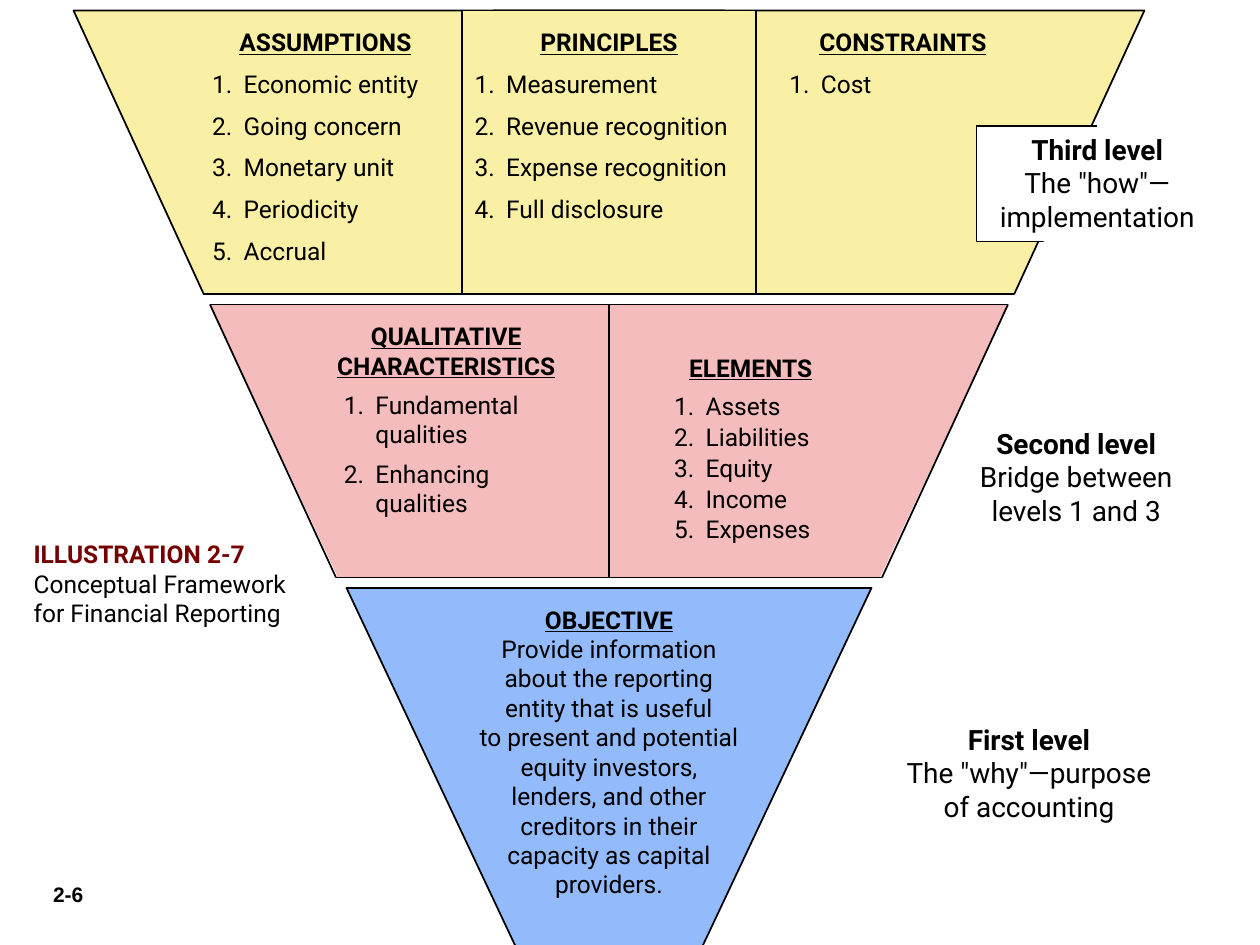
from lxml.etree import SubElement
from pptx import Presentation
from pptx.dml.color import RGBColor
from pptx.enum.shapes import MSO_CONNECTOR, MSO_SHAPE
from pptx.enum.text import MSO_ANCHOR, MSO_AUTO_SIZE, PP_ALIGN
from pptx.oxml.ns import qn
from pptx.util import Inches, Pt

BLACK = RGBColor(0x00, 0x00, 0x00)
WHITE = RGBColor(0xFF, 0xFF, 0xFF)
YELLOW = RGBColor(0xF9, 0xEF, 0xA5)
PINK = RGBColor(0xF4, 0xBC, 0xBC)
BLUE = RGBColor(0x93, 0xBB, 0xFB)
MAROON = RGBColor(0x74, 0x00, 0x00)

COLUMNS, ROWS = 120, 90
COMPARISON_LAYOUT = 4


class FrameworkSlide:
    font = "Roboto"
    body_size = 14
    level_size = 16

    def __init__(self, presentation):
        self.cell_width = presentation.slide_width / COLUMNS
        self.cell_height = presentation.slide_height / ROWS
        layout = presentation.slide_layouts[COMPARISON_LAYOUT]
        self.slide = presentation.slides.add_slide(layout)
        self.title = self.slide.shapes.title
        self.bodies = list(self.slide.placeholders)[1:]

    def place(self, column, row, width, height):
        return (round(column * self.cell_width), round(row * self.cell_height),
                round(width * self.cell_width), round(height * self.cell_height))

    def shape(self, kind, area, fill, line_width=0):
        shape = self.slide.shapes.add_shape(kind, *self.place(*area))
        shape.shadow.inherit = False
        shape.fill.solid()
        shape.fill.fore_color.rgb = fill
        if line_width:
            shape.line.color.rgb = BLACK
            shape.line.width = Pt(line_width)
        else:
            shape.line.fill.background()
        return shape

    def slanted_half(self, area, fill, line_width=0, right=False):
        column, row, width, height = area
        turned = (column + (width - height) / 2, row + (height - width) / 2, height, width)
        shape = self.shape(MSO_SHAPE.FLOWCHART_MANUAL_INPUT, turned, fill, line_width)
        shape.rotation = 90 if right else 270
        if right:
            shape._element.spPr.find(qn("a:xfrm")).set("flipH", "1")

    def line(self, start, end):
        left, top, right, bottom = self.place(*start, *end)
        connector = self.slide.shapes.add_connector(
            MSO_CONNECTOR.STRAIGHT, left, top, right, bottom)
        connector.line.color.rgb = BLACK
        connector.line.width = Pt(1)
        SubElement(connector._element.spPr, qn("a:effectLst"))

    def text_box(self, area):
        return self.slide.shapes.add_textbox(*self.place(*area))

    def move_placeholder(self, placeholder, area):
        placeholder.left, placeholder.top, placeholder.width, placeholder.height = self.place(*area)
        self.slide.shapes._spTree.append(placeholder._element)
        return placeholder

    def fill_text(self, shape, lines, size, align=PP_ALIGN.CENTER):
        frame = shape.text_frame
        frame.text = "\n".join(lines)
        frame.word_wrap = True
        frame.auto_size = MSO_AUTO_SIZE.NONE
        frame.vertical_anchor = MSO_ANCHOR.TOP
        for paragraph in frame.paragraphs:
            paragraph.alignment = align
            paragraph.space_before = Pt(0)
            for run in paragraph.runs:
                self.style(run, size)
        frame.paragraphs[0].runs[0].font.bold = True
        return frame.paragraphs

    def style(self, run, size, color=BLACK, bold=False):
        run.font.name = self.font
        run.font.size = Pt(size)
        run.font.color.rgb = color
        run.font.bold = bold

    def headed_text(self, shape, heading, lines):
        paragraphs = self.fill_text(shape, [heading, *lines], self.body_size)
        paragraphs[0].runs[0].font.underline = True
        return paragraphs

    def numbered_list(self, area, heading, items, before=7, heading_after=0,
                      spacing=1.0, indent=0.25):
        if self.bodies:
            shape = self.move_placeholder(self.bodies.pop(0), area)
        else:
            shape = self.text_box(area)
        header, *entries = self.headed_text(shape, heading, items)
        header.space_after = Pt(heading_after)
        self.bullet(header, 0, 0, "a:buNone")
        for entry in entries:
            entry.alignment = PP_ALIGN.LEFT
            entry.space_before = Pt(before)
            entry.line_spacing = spacing
            self.bullet(entry, indent, -0.25, "a:buAutoNum", type="arabicPeriod")

    def bullet(self, paragraph, margin, indent, tag, **attributes):
        properties = paragraph._p.get_or_add_pPr()
        properties.set("marL", str(Inches(margin)))
        properties.set("indent", str(Inches(indent)))
        SubElement(properties, qn(tag), **attributes)

    def caption(self, area, label, text):
        shape = self.move_placeholder(self.title, area)
        paragraph = self.fill_text(shape, [label], self.body_size, PP_ALIGN.LEFT)[0]
        self.style(paragraph.runs[0], self.body_size, MAROON, bold=True)
        run = paragraph.add_run()
        run.text = text
        self.style(run, self.body_size)

    def level_label(self, shape, lines):
        self.fill_text(shape, lines, self.level_size)

    def page_number(self, area, number):
        paragraph = self.fill_text(self.text_box(area), [number], 12)[0]
        paragraph.runs[0].font.name = "Arial"


def main():
    presentation = Presentation()
    presentation.slide_width = Inches(10)
    presentation.slide_height = Inches(7.5)
    framework = FrameworkSlide(presentation)

    framework.page_number((1, 83.4, 11, 3.6), "2-6")

    framework.slanted_half((35, 29, 61, 26), PINK, right=True)
    framework.slanted_half((20, 29, 61, 26), PINK)
    framework.slanted_half((47, 1, 62, 27), YELLOW, 1, right=True)
    framework.slanted_half((7, 1, 62, 27), YELLOW, 1)
    framework.shape(MSO_SHAPE.FLOWCHART_MERGE, (33, 56, 50, 53), BLUE, 1)
    framework.shape(MSO_SHAPE.RECTANGLE, (44, 1, 28, 27), YELLOW, 1)

    top_left, top_right, bottom_left, bottom_right = (20, 29), (96, 29), (32, 55), (84, 55)
    for start, end in (((58, 29), (58, 55)), (bottom_left, bottom_right),
                       (top_left, bottom_left), (top_right, bottom_right),
                       (top_left, top_right)):
        framework.line(start, end)

    framework.numbered_list((19, 2, 24, 25.2), "ASSUMPTIONS", [
        "Economic entity", "Going concern", "Monetary unit", "Periodicity", "Accrual"])
    framework.numbered_list((44, 2, 28, 21), "PRINCIPLES", [
        "Measurement", "Revenue recognition", "Expense recognition", "Full disclosure"])
    framework.numbered_list((30, 30, 25, 20.4), "QUALITATIVE CHARACTERISTICS", [
        "Fundamental qualities", "Enhancing qualities"], before=5.6, indent=0.38)
    framework.numbered_list((63, 33, 17, 19.5), "ELEMENTS", [
        "Assets", "Liabilities", "Equity", "Income", "Expenses"],
        before=0, heading_after=4.2, spacing=1.05)
    framework.numbered_list((74, 2, 24, 8.3), "CONSTRAINTS", ["Cost"])
    framework.headed_text(framework.text_box((44, 57, 28, 29.5)), "OBJECTIVE", [
        "Provide information about the reporting", "entity that is useful",
        "to present and potential", "equity investors,", "lenders, and other",
        "creditors in their", "capacity as capital", "providers."])

    framework.caption((2, 50.75, 28, 9.75), "ILLUSTRATION 2-7 ",
                      "Conceptual Framework for Financial Reporting")

    framework.level_label(framework.text_box((81, 68.2, 34, 11)), [
        "First level", "The \"why\"—purpose", "of accounting"])
    framework.level_label(framework.text_box((90, 40, 25, 11)), [
        "Second level", "Bridge between", "levels 1 and 3"])
    third_level = framework.shape(MSO_SHAPE.RECTANGLE, (93, 12, 23, 11), WHITE, 0.75)
    framework.level_label(third_level, ["Third level", "The \"how\"—", "implementation"])
    for border_gap in ((104.5, 11.75, 12.5, 0.6), (115, 11.75, 2, 13.2), (99.4, 22.3, 17.5, 2.6)):
        framework.shape(MSO_SHAPE.RECTANGLE, border_gap, WHITE)

    presentation.save("out.pptx")


if __name__ == "__main__":
    main()
